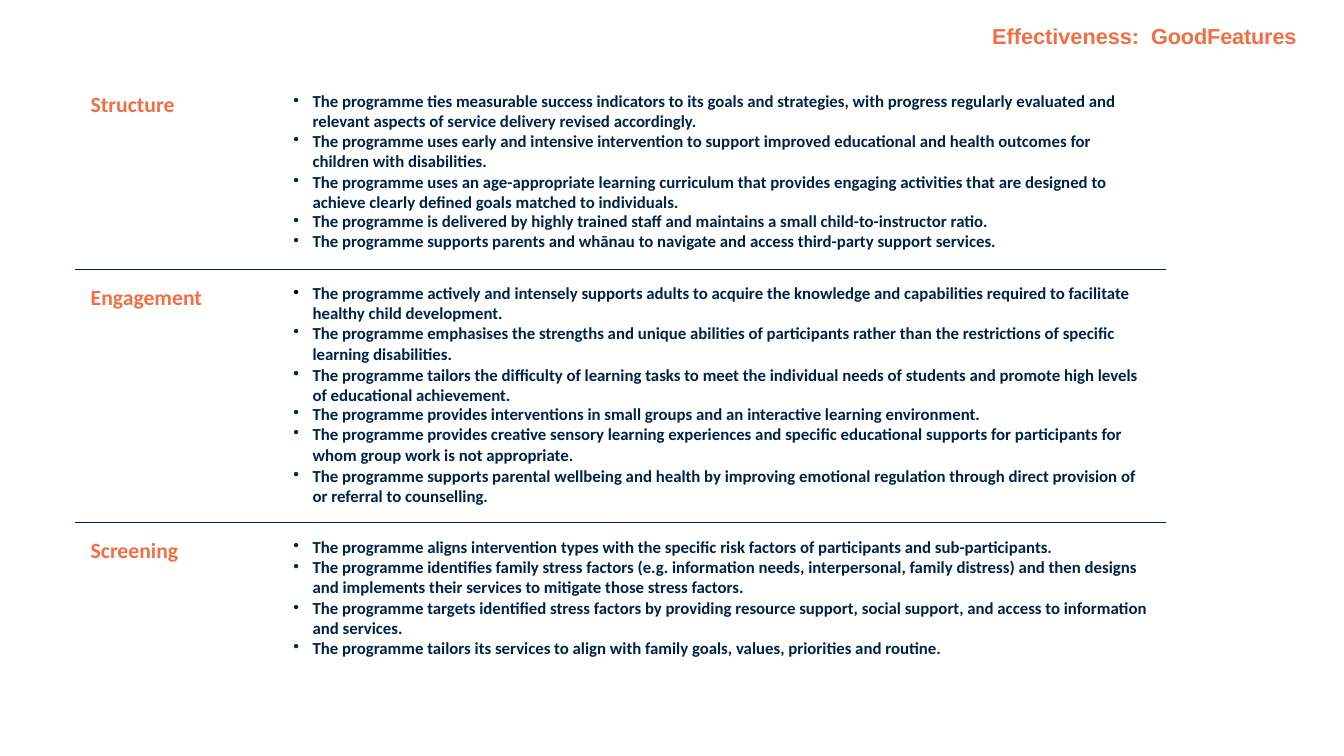
"""Build the slide that lists good programme features by theme."""
from dataclasses import dataclass

from lxml import etree
from pptx import Presentation
from pptx.dml.color import RGBColor
from pptx.enum.text import MSO_ANCHOR
from pptx.oxml.ns import qn
from pptx.util import Pt

TOP = MSO_ANCHOR.TOP
CORAL = RGBColor(0xF3, 0x6F, 0x43)
NAVY = RGBColor(0x00, 0x22, 0x48)
BLACK = RGBColor(0x00, 0x00, 0x00)
BODY, TITLE = "Calibri", "Arial"
PLAIN = "{2D5ABB26-0587-4C30-8999-92F81FD0307C}"


@dataclass(frozen=True)
class Point:
    text: str
    gap: float = 0
    line: float = 14.3
    mark: bool = True
    dot: RGBColor = NAVY


@dataclass(frozen=True)
class Theme:
    name: str
    height: float
    head: float
    inset: float
    points: tuple[Point, ...]


THEMES = (
    Theme("Structure", 137.5, 10.9, 11.2, (
        Point("The programme ties measurable success indicators to its goals and strategies, "
              "with progress regularly evaluated and relevant aspects of service delivery "
              "revised accordingly."),
        Point("The programme uses early and intensive intervention to support improved "
              "educational and health outcomes for", line=13.8),
        Point("children with disabilities.", 0.6, mark=False),
        Point("The programme uses an age-appropriate learning curriculum that provides engaging "
              "activities that are designed to achieve clearly defined goals matched to "
              "individuals.", 0.5),
        Point("The programme is delivered by highly trained staff and maintains a small "
              "child-to-instructor ratio.", line=13.7),
        Point("The programme supports parents and whānau to navigate and access third-party "
              "support services."),
    )),
    Theme("Engagement", 180.7, 11.2, 10.9, (
        Point("The programme actively and intensely supports adults to acquire the knowledge "
              "and capabilities required to facilitate", dot=BLACK),
        Point("healthy child development.", line=14.2, mark=False),
        Point("The programme emphasises the strengths and unique abilities of participants "
              "rather than the restrictions of specific"),
        Point("learning disabilities.", 0.6, mark=False),
        Point("The programme tailors the difficulty of learning tasks to meet the individual "
              "needs of students and promote high levels of educational achievement.", 0.5),
        Point("The programme provides interventions in small groups and an interactive "
              "learning environment.", line=13.8),
        Point("The programme provides creative sensory learning experiences and specific "
              "educational supports for participants for"),
        Point("whom group work is not appropriate.", 0.6, mark=False),
        Point("The programme supports parental wellbeing and health by improving emotional "
              "regulation through direct provision of or referral to counselling.", 0.5),
    )),
    Theme("Screening", 123.1, 11.3, 11.1, (
        Point("The programme aligns intervention types with the specific risk factors of "
              "participants and sub-participants."),
        Point("The programme identifies family stress factors (e.g. information needs, "
              "interpersonal, family distress) and then designs and implements their services "
              "to mitigate those stress factors.", 0.5),
        Point("The programme targets identified stress factors by providing resource support, "
              "social support, and access to information and services.", 0.7),
        Point("The programme tailors its services to align with family goals, values, "
              "priorities and routine.", line=13.8),
    )),
)


def style(run, face: str, size: float, tint: RGBColor) -> None:
    """Format a run as bold text."""
    run.font.name, run.font.size, run.font.bold = face, Pt(size), True
    run.font.color.rgb = tint


def indent(para, left: float, first: float = 0) -> None:
    """Set the left margin and the first-line indent."""
    props = para._p.get_or_add_pPr()
    props.set("marL", str(Pt(left)))
    props.set("indent", str(Pt(first)))


def bullet(para, tint: RGBColor) -> None:
    """Give a paragraph a round bullet."""
    props = para._p.get_or_add_pPr()
    shade = etree.SubElement(props, qn("a:buClr"))
    etree.SubElement(shade, qn("a:srgbClr"), val=str(tint))
    etree.SubElement(props, qn("a:buChar"), char="•")


def rule(cell, side: str) -> None:
    """Draw a thin line on one side of a cell."""
    line = etree.SubElement(cell._tc.get_or_add_tcPr(), qn(f"a:{side}"), w=str(Pt(0.5)))
    fill = etree.SubElement(line, qn("a:solidFill"))
    etree.SubElement(fill, qn("a:srgbClr"), val=str(NAVY))


def prepare(cell, inset: float, right: float, sides: list[str]) -> None:
    """Set the margins, lines and empty fill of a cell."""
    cell.margin_left = cell.margin_bottom = 0
    cell.margin_top, cell.margin_right = Pt(inset), Pt(right)
    cell.vertical_anchor = TOP
    for side in sides:
        rule(cell, side)
    cell.fill.background()


def write(para, point: Point) -> None:
    """Write one point or its follow-on line."""
    para.text = point.text
    indent(para, 45.4, -13.7 if point.mark else 0)
    if point.mark:
        bullet(para, point.dot)
    para.line_spacing = Pt(point.line)
    if point.gap:
        para.space_before = Pt(point.gap)
    style(para.runs[0], BODY, 12, NAVY)


def add_themes(slide) -> None:
    """Add the table of themes and their points."""
    total = sum(theme.height for theme in THEMES)
    table = slide.shapes.add_table(len(THEMES), 2, Pt(53.3), Pt(54.7),
                                   Pt(779.8), Pt(total)).table
    table.first_row = table.horz_banding = False
    table._tbl.tblPr.find(qn("a:tableStyleId")).text = PLAIN
    table.columns[0].width, table.columns[1].width = Pt(124.6), Pt(655.2)
    last = len(THEMES) - 1
    for row, theme in enumerate(THEMES):
        table.rows[row].height = Pt(theme.height)
        sides = ["lnT"] * (row > 0) + ["lnB"] * (row < last)
        name, body = table.cell(row, 0), table.cell(row, 1)
        prepare(name, theme.head, 0, sides)
        prepare(body, theme.inset, 9, sides)
        name.text_frame.text = theme.name
        para = name.text_frame.paragraphs[0]
        indent(para, 11.5)
        style(para.runs[0], BODY, 15.5, CORAL)
        frame = body.text_frame
        for spot, point in enumerate(theme.points):
            write(frame.add_paragraph() if spot else frame.paragraphs[0], point)


def add_title(slide) -> None:
    """Add the title at the top right."""
    frame = slide.shapes.add_textbox(Pt(707.8), Pt(15.1), Pt(226.8), Pt(20.9)).text_frame
    frame.word_wrap = True
    frame.margin_left = frame.margin_right = frame.margin_bottom = 0
    frame.margin_top = Pt(1.3)
    para = frame.paragraphs[0]
    indent(para, 0.9)
    for text, space in (("Effectiveness:", 0), (" ", 4.3), ("GoodFeatures", -0.1)):
        run = para.add_run()
        run.text = text
        style(run, TITLE, 15.5, CORAL)
        run.font._element.set("spc", str(round(space * 100)))


def main() -> None:
    """Build and save the slide."""
    deck = Presentation()
    deck.slide_width, deck.slide_height = Pt(960), Pt(540)
    slide = deck.slides.add_slide(deck.slide_layouts[6])
    add_themes(slide)
    add_title(slide)
    deck.save("out.pptx")


if __name__ == "__main__":
    main()
